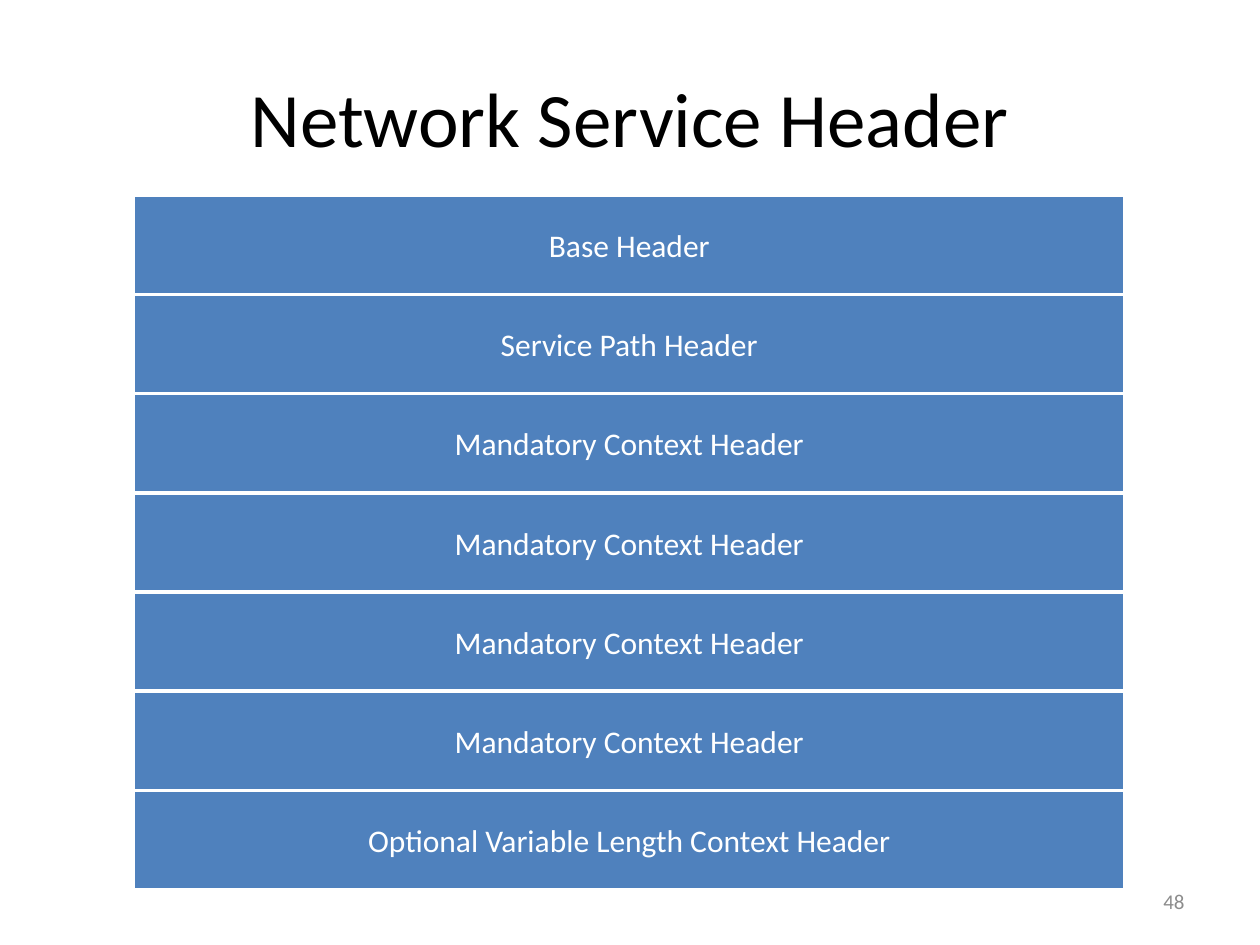
from pptx import Presentation, util as u
from pptx.dml.color import RGBColor
from pptx.enum import shapes, text

BLUE = RGBColor(0x4F, 0x81, 0xBD)
WHITE = RGBColor(0xFF, 0xFF, 0xFF)
BLACK = RGBColor(0, 0, 0)
GREY = RGBColor(0x8C, 0x8C, 0x8C)

HEADERS = (["Base Header", "Service Path Header"]
           + ["Mandatory Context Header"] * 4
           + ["Optional Variable Length Context Header"])


def inches(*lengths):
    return [u.Inches(n) for n in lengths]


def write(sp, words, size, color, align=text.PP_ALIGN.CENTER):
    tf = sp.text_frame
    tf.word_wrap = True
    tf.vertical_anchor = text.MSO_ANCHOR.MIDDLE
    p = tf.paragraphs[0]
    p.text = words
    p.alignment = align
    p.font.name = "Calibri"
    p.font.size = u.Pt(size)
    p.font.color.rgb = color


def add_title(s, box, words):
    sp = s.shapes.title
    sp.left, sp.top, sp.width, sp.height = box
    write(sp, words, 44, BLACK)


def add_page_number(s, box, number):
    write(s.shapes.add_textbox(*box), str(number), 12, GREY, text.PP_ALIGN.RIGHT)


def add_header_stack(s, box, labels):
    """Fill the box with equal rows, one for each label."""
    left, top, width, height = box
    row = height / len(labels)
    for i, label in enumerate(labels):
        sp = s.shapes.add_shape(shapes.MSO_SHAPE.RECTANGLE, left,
                                round(top + i * row), width, round(row))
        sp.shadow.inherit = False
        sp.fill.solid()
        sp.fill.fore_color.rgb = BLUE
        sp.line.color.rgb = WHITE
        sp.line.width = u.Pt(2)
        write(sp, label, 18, WHITE)


def main():
    prs = Presentation()
    prs.slide_width, prs.slide_height = inches(10, 7.5)
    s = prs.slides.add_slide(prs.slide_layouts[5])
    add_title(s, inches(0.5, 0.3, 9, 1.25), "Network Service Header")
    add_page_number(s, inches(7.17, 6.95, 2.33, 0.4), 48)
    add_header_stack(s, inches(1.06, 1.55, 7.87, 5.51), HEADERS)
    prs.save("out.pptx")


if __name__ == "__main__":
    main()
